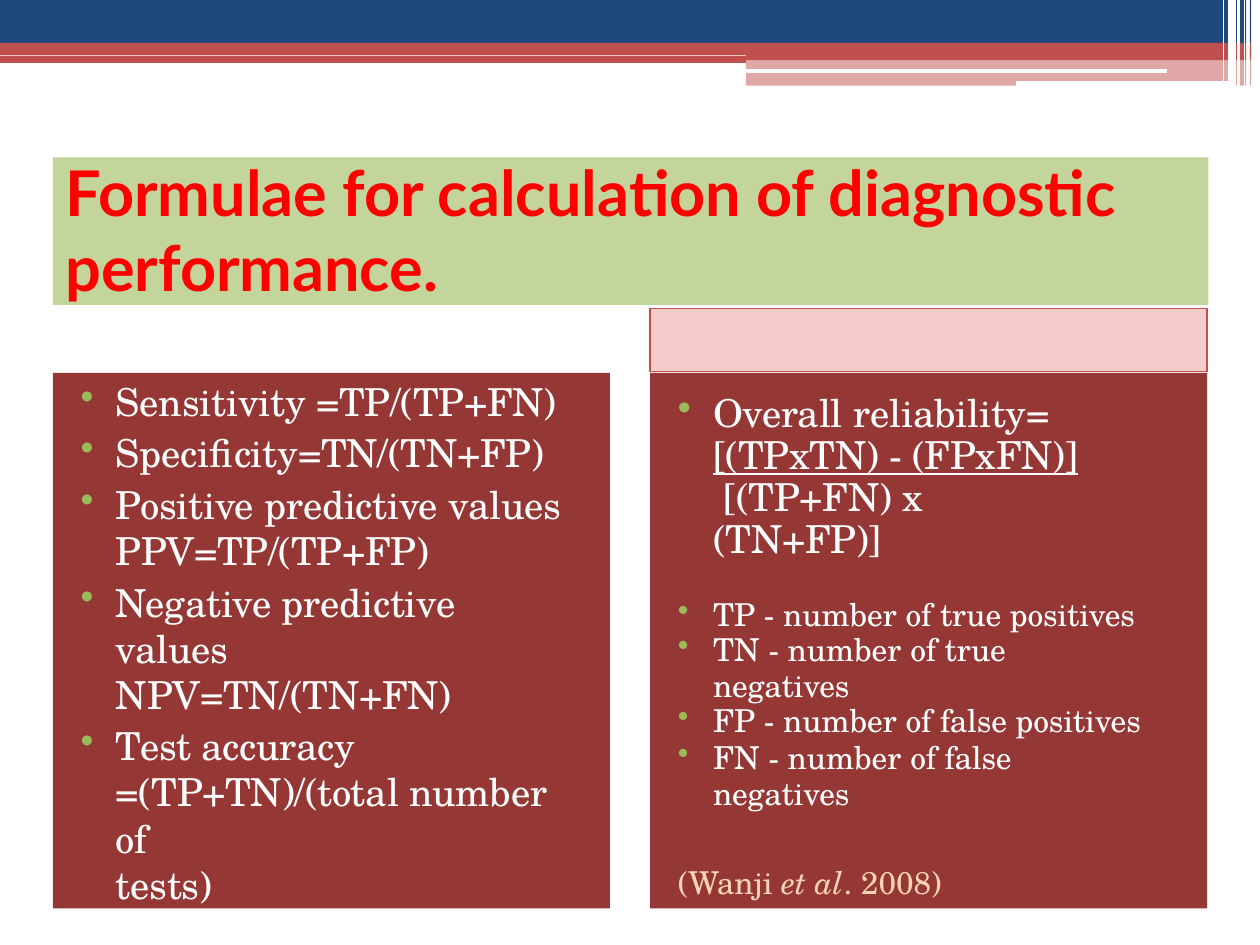
from lxml import etree
from pptx import Presentation
from pptx.dml.color import RGBColor
from pptx.enum.shapes import MSO_CONNECTOR, MSO_SHAPE
from pptx.enum.text import MSO_ANCHOR, PP_ALIGN
from pptx.oxml.ns import qn
from pptx.util import Pt

EMU_PER_PX = 9144  # 100 px to the inch

NAVY, RED, WHITE = "1F487C", "C0504D", "FFFFFF"
MAROON, LIME, PEACH = "943735", "9BBA58", "FBD4B5"
SERIF, SANS = "TeX Gyre Schola", "Lato"


def px(n):
    return n * EMU_PER_PX


def rgb(value):
    return RGBColor.from_string(value)


def run(text, **fmt):
    """Pair a text with its format: size, font, color, bold, italic, underline, spc."""
    return text, fmt


def para(*runs, **fmt):
    """Pair runs with a paragraph format: left, hang, before, line, bullet."""
    return runs, fmt


class Deck:
    def __init__(self, width, height):
        self.prs = Presentation()
        self.prs.slide_width, self.prs.slide_height = px(width), px(height)
        self.s = self.prs.slides.add_slide(self.prs.slide_layouts[6])
        self.base = dict(size=18, font=SERIF, color=WHITE)

    def rect(self, x, y, w, h, fill, alpha=100, line=None):
        sp = self.s.shapes.add_shape(MSO_SHAPE.RECTANGLE, px(x), px(y), px(w), px(h))
        sp.shadow.inherit = False
        sp.fill.solid()
        sp.fill.fore_color.rgb = rgb(fill)
        if alpha < 100:
            clr = sp._element.spPr.find(qn("a:solidFill")).find(qn("a:srgbClr"))
            etree.SubElement(clr, qn("a:alpha")).set("val", str(alpha * 1000))
        if line:
            sp.line.color.rgb = rgb(line)
            sp.line.width = Pt(0.96)
        else:
            sp.line.fill.background()
        return sp

    def line(self, x1, y1, x2, y2, color, width):
        c = self.s.shapes.add_connector(
            MSO_CONNECTOR.STRAIGHT, px(x1), px(y1), px(x2), px(y2))
        c.line.color.rgb = rgb(color)
        c.line.width = Pt(width)
        etree.SubElement(c._element.spPr, qn("a:effectLst"))

    def text_box(self, x, y, w, h, paras, **fmt):
        sp = self.s.shapes.add_textbox(px(x), px(y), px(w), px(h))
        self.set_text(sp, paras, **fmt)

    def set_text(self, sp, paras, top=0, right=0, **fmt):
        """Fill a shape with paragraphs; top and right are insets."""
        tf = sp.text_frame
        tf.word_wrap = True
        tf.vertical_anchor = MSO_ANCHOR.TOP
        tf.margin_left = tf.margin_bottom = 0
        tf.margin_top, tf.margin_right = px(top), px(right)
        for i, (runs, layout) in enumerate(paras):
            p = tf.add_paragraph() if i else tf.paragraphs[0]
            self.lay_out(p, **layout)
            for text, own in runs:
                self.add_run(p, text, **{**self.base, **fmt, **own})

    def lay_out(self, p, left=0, hang=0, before=0, line=None, bullet=False):
        p.alignment = PP_ALIGN.LEFT
        p.space_before = Pt(before)
        if line:
            p.line_spacing = Pt(line)
        pPr = p._p.get_or_add_pPr()
        pPr.set("marL", str(px(left)))
        pPr.set("indent", str(px(-hang)))
        if bullet:
            clr = etree.SubElement(pPr, qn("a:buClr"))
            etree.SubElement(clr, qn("a:srgbClr")).set("val", LIME)
            etree.SubElement(pPr, qn("a:buChar")).set("char", "•")

    def add_run(self, p, text, size, font, color, bold=False, italic=False,
                underline=False, spc=0):
        for i, part in enumerate(text.split("\v")):
            if i:
                p.add_line_break()
            if not part:
                continue
            r = p.add_run()
            r.text = part
            f = r.font
            f.size, f.name, f.color.rgb = Pt(size), font, rgb(color)
            f.bold, f.italic, f.underline = bold, italic, underline
            if spc:
                r._r.get_or_add_rPr().set("spc", str(spc))


def draw_banner(d):
    d.line(0, 47, 592, 47, RED, 3.96)
    bands = [(0, 0, 34, NAVY, 100), (0, 34, 10, RED, 100),
             (592, 39, 9, RED, 100), (592, 48, 20, RED, 50)]
    for left, top, height, color, alpha in bands:
        d.rect(992, top, 1, height, color, alpha)
        d.rect(left, top, 989 - left, height, color, alpha)
    d.line(591, 56, 926, 56, WHITE, 2.28)
    d.line(806, 66, 981, 66, WHITE, 2.88)
    for x, bottom, width in [(988, 68, 0.72), (983, 68, 2.04),
                             (978, 64, 4.32), (971, 64, 0.6)]:
        d.line(x, 0, x, bottom, WHITE, width)


def draw_title(d):
    title = d.rect(42, 125, 917, 117, "C3D59B")
    d.set_text(title, [
        para(run("Formulae for calculation of diagnostic"), left=10, line=41),
        para(run("performance."), left=10, line=43.1),
    ], size=36, font=SANS, color="FF0000", bold=True)


def draw_formulae(d):
    formulae = [
        ("Sensitivity =TP/(TP+FN)",),
        ("Specificity=TN/(TN+FP)",),
        ("Positive predictive values", "PPV=TP/(TP+FP)"),
        ("Negative predictive values\vNPV=TN/(TN+FN)",),
        ("Test accuracy", "=(TP+TN)/(total number of", "tests)"),
    ]
    paras = []
    for head, *rest in formulae:
        paras.append(para(run(head), left=50, hang=28, before=3, bullet=True))
        paras += [para(run(text), left=50) for text in rest]
    panel = d.rect(42, 296, 442, 425, MAROON)
    d.set_text(panel, paras, top=4, right=30, size=22, spc=-10)


def draw_reliability(d):
    d.rect(516, 245, 442, 50, "DD352F", 25, line=RED)
    d.rect(516, 296, 442, 425, MAROON)
    d.text_box(538, 307, 326, 106, [
        para(run("Overall reliability=\v"),
             run("[(TPxTN) - (FPxFN)]", underline=True),
             run("\v [(TP+FN) x (TN+FP)]"),
             left=28, hang=28, before=3.6, line=24.1, bullet=True),
    ], top=5, size=22, spc=-10)

    legend = [("TP", "true positives", 20.9), ("TN", "true negatives", 20.3),
              ("FP", "false positives", 20.3), ("FN", "false negatives", 20.9)]
    d.text_box(538, 472, 372, 117, [
        para(run(f"{short} - number "), run(f"of {meaning}", spc=-10),
             left=28, hang=28, before=0 if i else 1, line=spacing, bullet=True)
        for i, (short, meaning, spacing) in enumerate(legend)
    ], top=1)

    d.text_box(538, 684, 213, 33, [
        para(run("(Wanji "), run("et al", italic=True), run(". 2008)"), before=1),
    ], top=1, color=PEACH)


def main():
    d = Deck(1000, 750)
    draw_banner(d)
    draw_title(d)
    draw_formulae(d)
    draw_reliability(d)
    d.prs.save("out.pptx")


if __name__ == "__main__":
    main()
